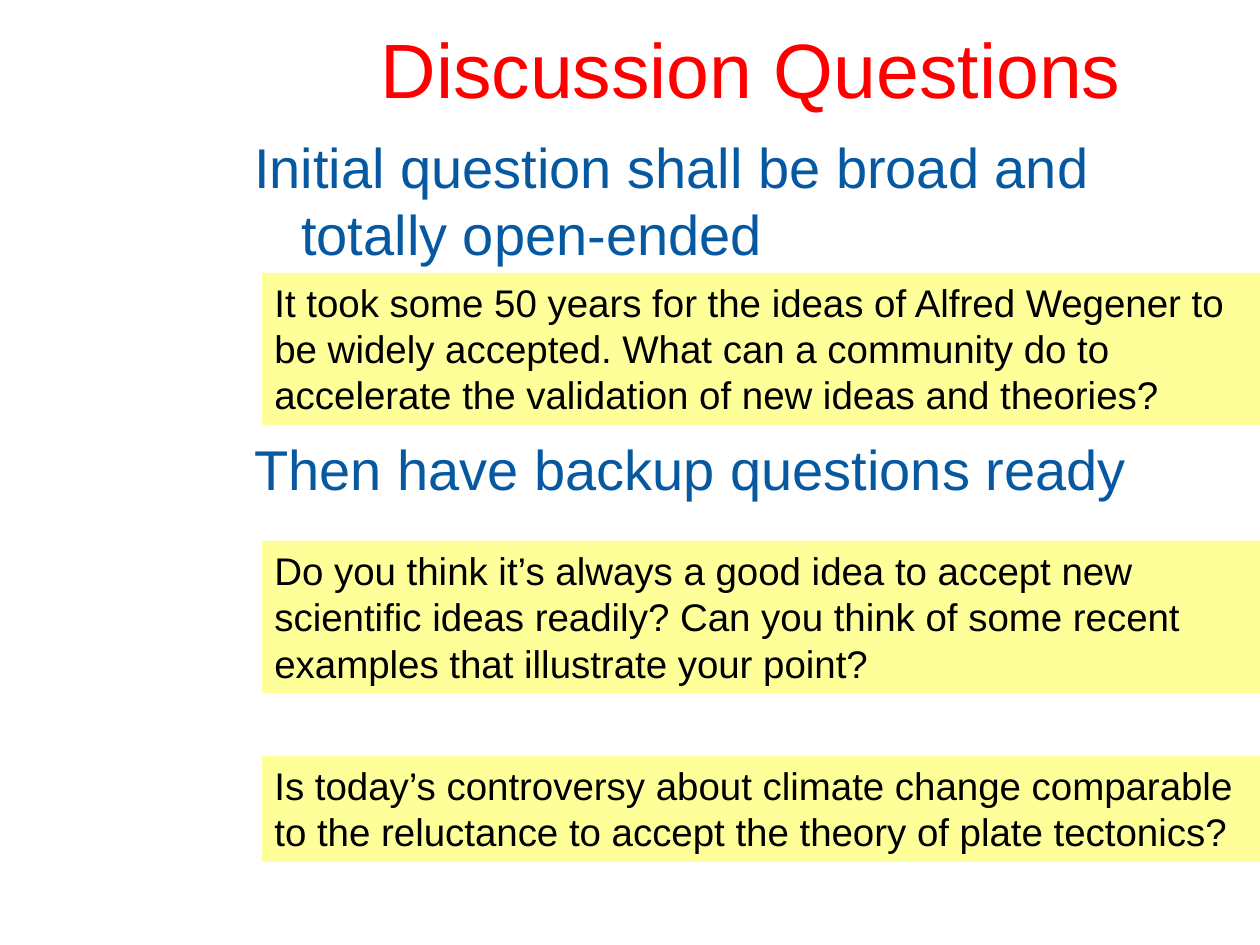
from pptx import Presentation
from pptx.dml.color import RGBColor
from pptx.enum.shapes import MSO_SHAPE
from pptx.enum.text import MSO_ANCHOR, PP_ALIGN
from pptx.util import Emu, Pt


def px(n):
    return Emu(round(n * 914400 / 126))


def color(code):
    return RGBColor.from_string(code)


def write(shape, *lines, size, ink, align=PP_ALIGN.LEFT,
          anchor=MSO_ANCHOR.TOP, hang=0, gap=0):
    frame = shape.text_frame
    frame.word_wrap = True
    frame.vertical_anchor = anchor
    for i, line in enumerate(lines):
        para = frame.add_paragraph() if i else frame.paragraphs[0]
        if hang:
            props = para._p.get_or_add_pPr()
            props.set("marL", str(px(hang)))
            props.set("indent", str(-px(hang)))
        para.alignment = align
        para.line_spacing = Pt(size * 1.2)
        para.space_before = Pt(gap if i else 0)
        run = para.add_run()
        run.text = line
        run.font.name = "Arial"
        run.font.size = Pt(size)
        run.font.color.rgb = color(ink)


def title(slide, box, text):
    shape = slide.shapes.add_textbox(*map(px, box))
    write(shape, text, size=44, ink="FF0000",
          align=PP_ALIGN.CENTER, anchor=MSO_ANCHOR.MIDDLE)


def body(slide, box, lines):
    shape = slide.shapes.add_textbox(*map(px, box))
    write(shape, *lines, size=32, ink="0659A0", hang=47, gap=96)


def question(slide, box, text):
    shape = slide.shapes.add_shape(MSO_SHAPE.RECTANGLE, *map(px, box))
    shape.shadow.inherit = False
    shape.fill.solid()
    shape.fill.fore_color.rgb = color("FFFF99")
    shape.line.fill.background()
    write(shape, text, size=22, ink="000000")


QUESTIONS = [
    (273, 152, "It took some 50 years for the ideas of Alfred Wegener to be "
               "widely accepted. What can a community do to accelerate the "
               "validation of new ideas and theories?"),
    (541, 152, "Do you think it’s always a good idea to accept new scientific "
               "ideas readily? Can you think of some recent examples that "
               "illustrate your point?"),
    (756, 106, "Is today’s controversy about climate change comparable to the "
               "reluctance to accept the theory of plate tectonics?"),
]


def main():
    deck = Presentation()
    deck.slide_width, deck.slide_height = px(1260), px(945)
    slide = deck.slides.add_slide(deck.slide_layouts[6])
    title(slide, (242, 0, 1018, 136), "Discussion Questions")
    body(slide, (242, 126, 1018, 766), [
        "Initial question shall be broad and totally open-ended",
        "Then have backup questions ready",
    ])
    for top, height, text in QUESTIONS:
        question(slide, (262, top, 998, height), text)
    deck.save("out.pptx")


if __name__ == "__main__":
    main()
